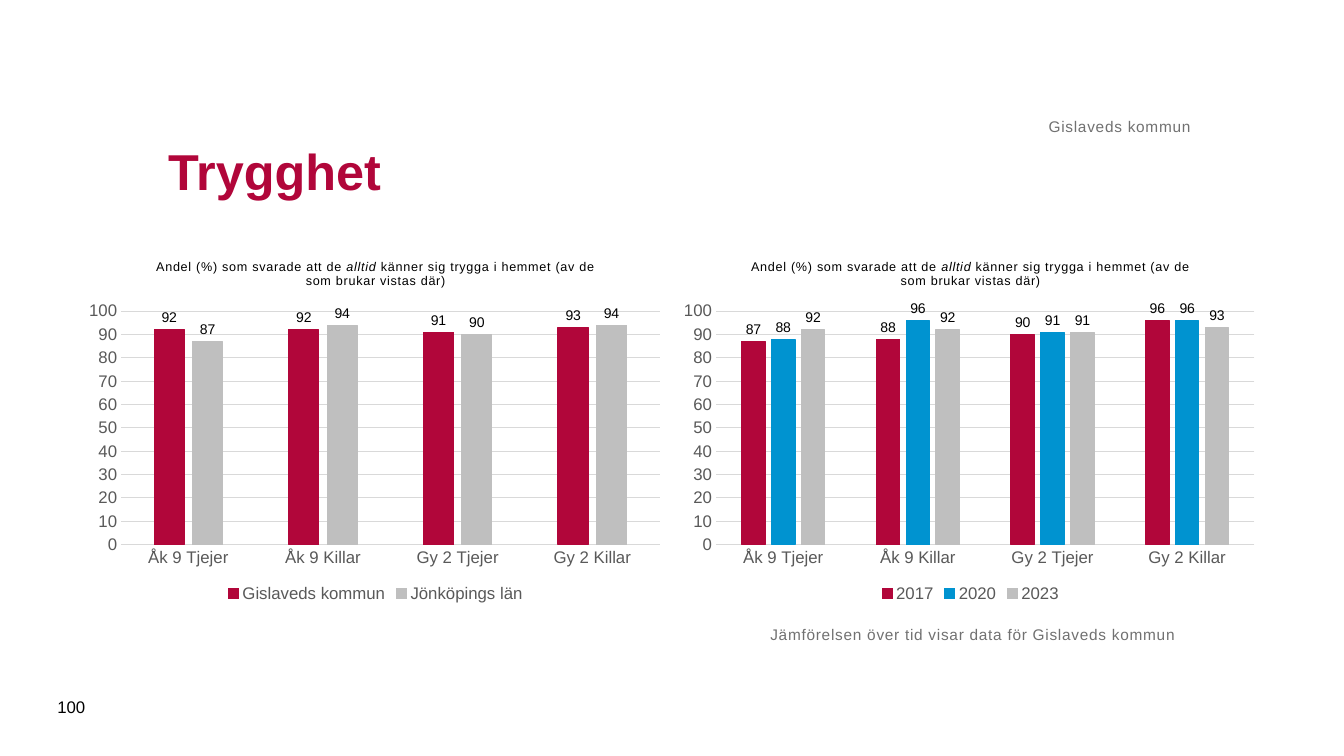
from lxml.etree import SubElement
from pptx import Presentation
from pptx.chart.data import CategoryChartData
from pptx.dml.color import RGBColor
from pptx.enum.chart import XL_CHART_TYPE as CT, XL_LABEL_POSITION as LP
from pptx.enum.chart import XL_LEGEND_POSITION as LEG, XL_TICK_MARK as TM
from pptx.enum.text import MSO_ANCHOR as VA, PP_ALIGN as AL
from pptx.oxml import parse_xml
from pptx.oxml.ns import nsdecls, qn
from pptx.util import Inches, Pt

WIDTH, HEIGHT = 13.33, 7.5
RED = RGBColor(0xB1, 0x06, 0x3A)
BLUE = RGBColor(0x00, 0x93, 0xD0)
SILVER = RGBColor(0xBF, 0xBF, 0xBF)
RULE = RGBColor(0xD9, 0xD9, 0xD9)
AXIS_GREY = RGBColor(0x59, 0x59, 0x59)
NOTE_GREY = RGBColor(0x71, 0x71, 0x71)
BLACK = RGBColor(0, 0, 0)

NUMBER = "#,##0;#,##0"
GROUPS = ["Åk 9 Tjejer", "Åk 9 Killar", "Gy 2 Tjejer", "Gy 2 Killar"]
QUESTION = [("Andel (%) som svarade att de ", False), ("alltid", True),
            (" känner sig trygga i hemmet (av de som brukar vistas där)", False)]
PLOT_SHARES = {"x": 0.07, "y": 0.19, "w": 0.91, "h": 0.64}
CHARTS = [
    [("Gislaveds kommun", RED, (92, 92, 91, 93)),
     ("Jönköpings län", SILVER, (87, 94, 90, 94))],
    [("2017", RED, (87, 88, 90, 96)),
     ("2020", BLUE, (88, 96, 91, 96)),
     ("2023", SILVER, (92, 92, 91, 93))],
]
CHART_LEFT, CHART_TOP, CHART_W, CHART_H, CHART_STEP = 0.79, 2.4, 5.87, 3.62, 5.9
NOTE = {"size": 11, "color": NOTE_GREY, "spacing": 0.5, "inset": 0}
TEXTS = [
    ("Trygghet", (1.57, 0.98, 10.24, 1.42),
     {"size": 36, "color": RED, "bold": True, "anchor": VA.MIDDLE}),
    ("Jämförelsen över tid visar data för Gislaveds kommun",
     (7.64, 6.2, 5.31, 0.94), NOTE),
    ("Gislaveds kommun", (1.57, 0.62, 10.24, 0.73),
     {**NOTE, "anchor": VA.BOTTOM, "align": AL.RIGHT}),
    ("100", (0.47, 6.81, 0.57, 0.4),
     {"size": 12, "color": BLACK, "anchor": VA.MIDDLE}),
]


def set_font(font, size, color, **styles):
    """Apply the slide's typeface with the given size, colour and styles."""
    formats = {"name": "Arial", "size": Pt(size), "bold": False, **styles}
    for name, value in formats.items():
        setattr(font, name, value)
    font.color.rgb = color


def set_spacing(r, points):
    """Set the letter spacing of a run."""
    r._r.get_or_add_rPr().set("spc", str(int(points * 100)))


def add_text(s, text, box, fmt):
    """Place one line of text in a box."""
    tf = s.shapes.add_textbox(*map(Inches, box)).text_frame
    tf.word_wrap = True
    tf.vertical_anchor = fmt.get("anchor", VA.TOP)
    if "inset" in fmt:
        for side in ("left", "top", "right", "bottom"):
            setattr(tf, f"margin_{side}", Inches(fmt["inset"]))
    p = tf.paragraphs[0]
    p.alignment = fmt.get("align", AL.LEFT)
    r = p.add_run()
    r.text = text
    set_font(r.font, fmt["size"], fmt["color"], bold=fmt.get("bold", False))
    set_spacing(r, fmt.get("spacing", 0))


def style_title(chart):
    """Write the survey question above the columns."""
    p = chart.chart_title.text_frame.paragraphs[0]
    for text, italic in QUESTION:
        r = p.add_run()
        r.text = text
        set_font(r.font, 9, BLACK, italic=italic)
        set_spacing(r, 0.5)


def style_axes(chart):
    """Format both axes and the gridlines."""
    for axis in (chart.category_axis, chart.value_axis):
        axis.major_tick_mark = axis.minor_tick_mark = TM.NONE
        set_font(axis.tick_labels.font, 12, AXIS_GREY)
    values = chart.value_axis
    values.minimum_scale, values.maximum_scale, values.major_unit = 0, 100, 10
    values.tick_labels.number_format = NUMBER
    values.tick_labels.number_format_is_linked = False
    values.format.line.fill.background()
    for line in (chart.category_axis.format.line, values.major_gridlines.format.line):
        line.color.rgb = RULE
        line.width = Pt(0.75)


def style_columns(plot, colors):
    """Colour the columns and label them with their values."""
    plot.gap_width, plot.overlap, plot.vary_by_categories = 219, -27, False
    for series, color in zip(plot.series, colors):
        series.format.fill.solid()
        series.format.fill.fore_color.rgb = color
        series.format.line.color.rgb = color
        series.format.line.width = Pt(0.75)
        labels = series.data_labels
        formats = {"show_value": True, "position": LP.OUTSIDE_END,
                   "number_format": NUMBER, "number_format_is_linked": False}
        for name, value in formats.items():
            setattr(labels, name, value)
        set_font(labels.font, 10, BLACK)


def place_plot(chart):
    """Fix the inner plot area as shares of the chart."""
    area = chart._chartSpace.find(".//" + qn("c:plotArea"))
    for old in area.findall(qn("c:layout")):
        area.remove(old)
    layout = parse_xml(f"<c:layout {nsdecls('c')}><c:manualLayout/></c:layout>")
    values = {"layoutTarget": "inner", "xMode": "edge", "yMode": "edge", **PLOT_SHARES}
    for name, value in values.items():
        SubElement(layout[0], qn(f"c:{name}")).set("val", str(value))
    area.insert(0, layout)


def add_columns(s, box, rows):
    """Place a clustered column chart in a box."""
    data = CategoryChartData(number_format=NUMBER)
    data.categories = GROUPS
    for name, _, values in rows:
        data.add_series(name, values)
    chart = s.shapes.add_chart(CT.COLUMN_CLUSTERED, *map(Inches, box), data).chart
    set_font(chart.font, 10, BLACK)
    style_title(chart)
    style_axes(chart)
    style_columns(chart.plots[0], [color for _, color, _ in rows])
    chart.has_legend = True
    chart.legend.position = LEG.BOTTOM
    chart.legend.include_in_layout = False
    set_font(chart.legend.font, 12, AXIS_GREY)
    place_plot(chart)


def main():
    """Build and save the slide."""
    prs = Presentation()
    prs.slide_width, prs.slide_height = Inches(WIDTH), Inches(HEIGHT)
    s = prs.slides.add_slide(prs.slide_layouts[6])
    for i, rows in enumerate(CHARTS):
        add_columns(s, (CHART_LEFT + i * CHART_STEP, CHART_TOP, CHART_W, CHART_H), rows)
    for text, box, fmt in TEXTS:
        add_text(s, text, box, fmt)
    prs.save("out.pptx")


if __name__ == "__main__":
    main()
